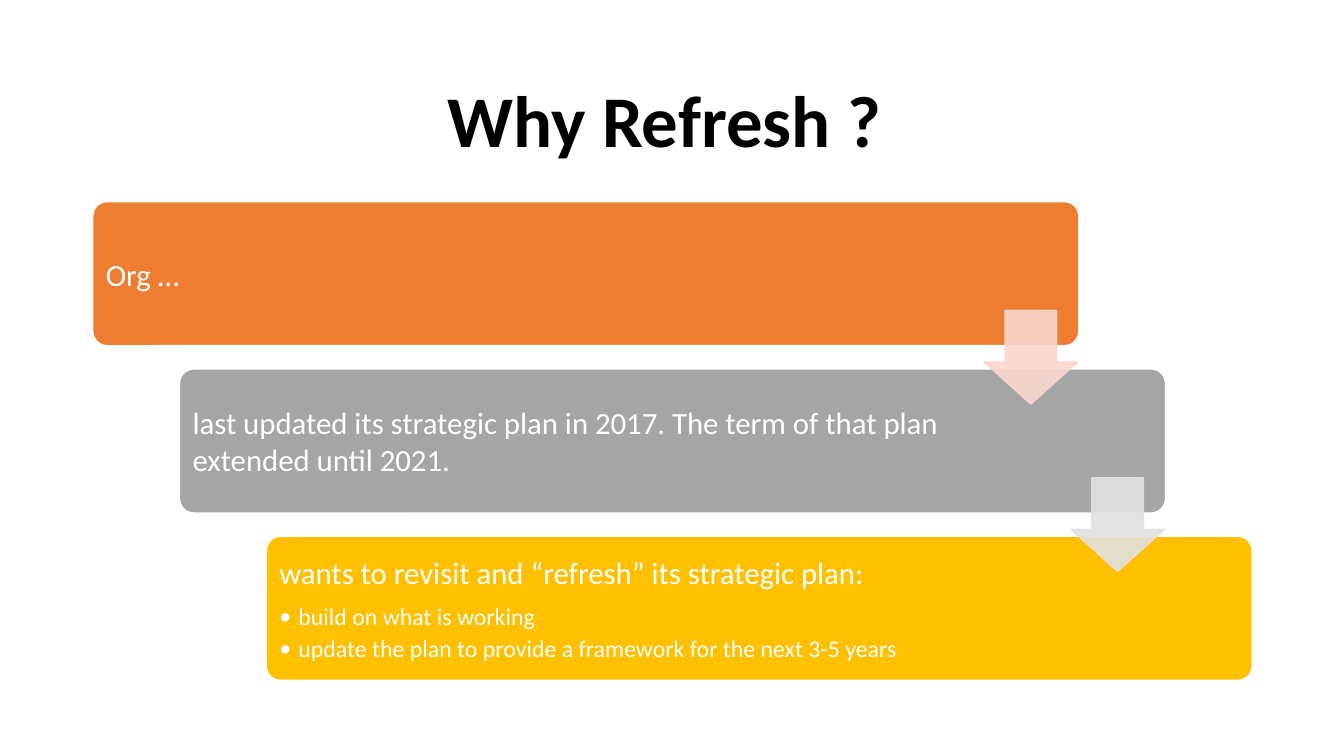
from dataclasses import dataclass

from lxml.etree import SubElement
from pptx import Presentation
from pptx.dml.color import RGBColor
from pptx.enum.shapes import MSO_SHAPE as Shape
from pptx.enum.text import MSO_ANCHOR as Anchor, PP_ALIGN as Align
from pptx.oxml.ns import qn
from pptx.util import Inches, Pt


@dataclass(frozen=True)
class Theme:
    font: str = "Calibri"
    title_color: str = "000000"
    light: str = "FFFFFF"
    title_size: int = 52
    step_size: int = 22
    bullet_size: int = 17
    line_width: int = 1


THEME = Theme()

# Staircase grid: each step moves one column right and one row down.
LEFT, TOP = 0.92, 2.0
COLUMN, ROW = 0.86, 1.66
STEP_WIDTH, STEP_HEIGHT = 9.78, 1.43
TEXT_MARGIN = 0.04
ARROW_SIZE = 0.93
ARROW_LEFT, ARROW_TOP = 8.84, 1.08  # from the step's corner

STEPS = [
    # fill, arrow fill, text width, heading, bullets
    ("ED7D31", "F8D7CE", 8.23, "Org …", []),
    ("A5A5A5", "E1E1E1", 7.9,
     "last updated its strategic plan in 2017. The term of that plan extended until 2021.", []),
    ("FFC000", None, 7.9, "wants to revisit and “refresh” its strategic plan:",
     ["build on what is working",
      "update the plan to provide a framework for the next 3-5 years"]),
]


def write(paragraph, text, *, size, color=THEME.light, bold=False,
          align=Align.LEFT, after=0, line_spacing=None, bullet=False):
    """Fill a paragraph with one formatted run."""
    paragraph.alignment = align
    paragraph.space_after = Pt(after)
    if line_spacing:
        paragraph.line_spacing = line_spacing
    run = paragraph.add_run()
    run.text = text
    run.font.name = THEME.font
    run.font.size = Pt(size)
    run.font.bold = bold
    run.font.color.rgb = RGBColor.from_string(color)
    if bullet:
        properties = paragraph._p.get_or_add_pPr()
        properties.set("marL", str(Inches(0.19)))
        properties.set("indent", str(Inches(-0.19)))
        SubElement(properties, qn("a:buFont"), typeface=THEME.font)
        SubElement(properties, qn("a:buChar"), char="•")


def add_block(slide, kind, box, fill, line, adjustments, opacity=None):
    """Add a preset shape; opacity is a percentage for fill and line."""
    shape = slide.shapes.add_shape(kind, *map(Inches, box))
    shape.shadow.inherit = False
    for index, value in enumerate(adjustments):
        shape.adjustments[index] = value
    shape.fill.solid()
    shape.fill.fore_color.rgb = RGBColor.from_string(fill)
    shape.line.color.rgb = RGBColor.from_string(line)
    shape.line.width = Pt(THEME.line_width)
    if opacity is not None:
        for color in shape._element.spPr.iter(qn("a:srgbClr")):
            SubElement(color, qn("a:alpha"), val=str(opacity * 1000))


def add_title(slide, text):
    title = slide.shapes.title
    title.left, title.top, title.width, title.height = map(Inches, (LEFT, 0.61, 11.5, 1.24))
    title.text_frame.vertical_anchor = Anchor.MIDDLE
    write(title.text_frame.paragraphs[0], text, size=THEME.title_size,
          color=THEME.title_color, bold=True, align=Align.CENTER, line_spacing=0.9)


def add_step_text(slide, left, top, width, heading, bullets):
    box = (left + TEXT_MARGIN, top + TEXT_MARGIN, width, STEP_HEIGHT - 2 * TEXT_MARGIN)
    frame = slide.shapes.add_textbox(*map(Inches, box)).text_frame
    frame.word_wrap = True
    frame.vertical_anchor = Anchor.MIDDLE
    frame.margin_left = frame.margin_right = Inches(0.09)
    frame.margin_top = frame.margin_bottom = Inches(0.09)
    write(frame.paragraphs[0], heading, size=THEME.step_size, after=0.35 * THEME.step_size)
    for text in bullets:
        paragraph = frame.add_paragraph()
        paragraph.level = 1
        write(paragraph, text, size=THEME.bullet_size,
              after=0.15 * THEME.bullet_size, bullet=True)


def main():
    presentation = Presentation()
    presentation.slide_width, presentation.slide_height = Inches(13.33), Inches(7.5)
    slide = presentation.slides.add_slide(presentation.slide_layouts.get_by_name("Title Only"))
    add_title(slide, "Why Refresh ? ")

    corners = [(LEFT + i * COLUMN, TOP + i * ROW) for i in range(len(STEPS))]
    for (left, top), (fill, _, width, heading, bullets) in zip(corners, STEPS):
        add_block(slide, Shape.ROUNDED_RECTANGLE, (left, top, STEP_WIDTH, STEP_HEIGHT),
                  fill, THEME.light, [0.1])
        add_step_text(slide, left, top, width, heading, bullets)
    for (left, top), (_, arrow_fill, *_) in zip(corners, STEPS):
        if arrow_fill:
            add_block(slide, Shape.DOWN_ARROW,
                      (left + ARROW_LEFT, top + ARROW_TOP, ARROW_SIZE, ARROW_SIZE),
                      arrow_fill, arrow_fill, [0.55, 0.45], opacity=90)

    presentation.save("out.pptx")


if __name__ == "__main__":
    main()
